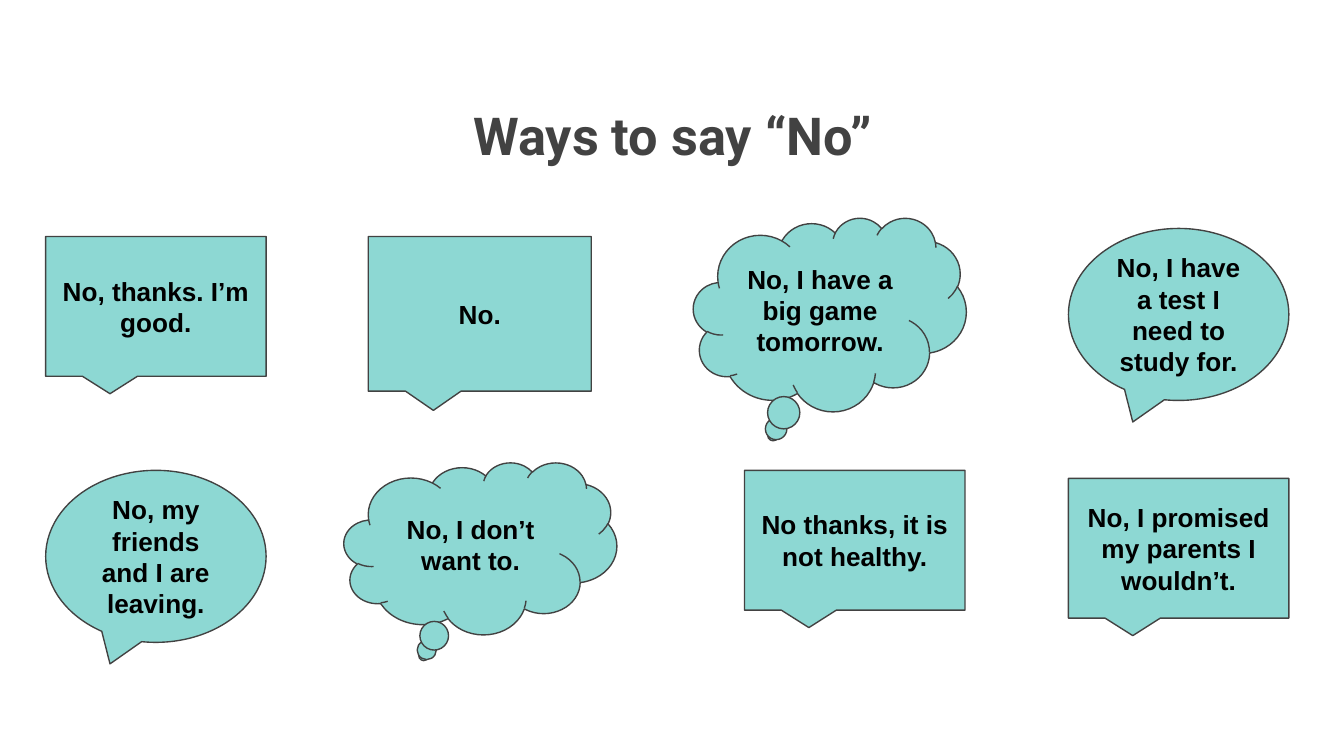
from dataclasses import dataclass

from pptx import Presentation
from pptx.dml.color import RGBColor
from pptx.enum.shapes import MSO_SHAPE
from pptx.enum.text import MSO_ANCHOR, MSO_AUTO_SIZE, PP_ALIGN
from pptx.util import Inches, Pt


@dataclass(frozen=True)
class Theme:
    """Colours, fonts and sizes of the slide."""
    ink: RGBColor = RGBColor(0x42, 0x42, 0x42)
    fill: RGBColor = RGBColor(0x8D, 0xD8, 0xD3)
    text: RGBColor = RGBColor(0, 0, 0)
    head: str = "Roboto"
    body: str = "Arial"
    large: Pt = Pt(28)
    small: Pt = Pt(14)
    rule: Pt = Pt(0.75)


THEME = Theme()
UNIT = Inches(0.1)
COLS, ROWS = 100, 56.25
TAIL = (-0.208, 0.625)

RECT = MSO_SHAPE.RECTANGULAR_CALLOUT
ROUND = MSO_SHAPE.ROUNDED_RECTANGULAR_CALLOUT
OVAL = MSO_SHAPE.OVAL_CALLOUT
CLOUD = MSO_SHAPE.CLOUD_CALLOUT

REPLIES = [
    (RECT, (0, 1.4, 16.4, 10.4), "No, thanks. I’m good."),
    (ROUND, (24, 1.4, 16.6, 11.5), "No."),
    (OVAL, (76.1, 0.8, 16.4, 12.8), "No, I have a test I need to study for."),
    (CLOUD, (48.2, 0, 20.3, 14.4), "No, I have a big game tomorrow."),
    (RECT, (76.1, 19.4, 16.4, 10.4), "No, I promised my parents I wouldn’t."),
    (ROUND, (52, 18.8, 16.4, 10.4), "No thanks, it is not healthy."),
    (CLOUD, (22.2, 18.2, 20.3, 12.8), "No, I don’t want to."),
    (OVAL, (0, 18.8, 16.4, 12.8), "No, my friends and I are leaving."),
]


def grid(*cells):
    """Turn grid cells into slide lengths."""
    return [int(cell * UNIT) for cell in cells]


def write(shape, text, font, size, colour, anchor):
    """Fill a shape with one bold, centred paragraph."""
    frame = shape.text_frame
    frame.text = text
    frame.word_wrap = True
    frame.auto_size = MSO_AUTO_SIZE.NONE
    frame.vertical_anchor = anchor
    frame.margin_left = frame.margin_right = UNIT
    frame.margin_top = frame.margin_bottom = UNIT
    line = frame.paragraphs[0]
    line.alignment = PP_ALIGN.CENTER
    line.font.name, line.font.size, line.font.bold = font, size, True
    line.font.color.rgb = colour


def add_title(slide, box, text):
    """Place and format the title."""
    title = slide.shapes.title
    title.left, title.top, title.width, title.height = grid(*box)
    write(title, text, THEME.head, THEME.large, THEME.ink, MSO_ANCHOR.TOP)


def add_bubble(slide, box, kind, text):
    """Draw one speech bubble with its reply."""
    bubble = slide.shapes.add_shape(kind, *grid(*box))
    bubble.shadow.inherit = False
    bubble.fill.solid()
    bubble.fill.fore_color.rgb = THEME.fill
    bubble.line.color.rgb = THEME.ink
    bubble.line.width = THEME.rule
    tail = TAIL + (0,) if kind == ROUND else TAIL
    for spot, value in enumerate(tail):
        bubble.adjustments[spot] = value
    write(bubble, text, THEME.body, THEME.small, THEME.text, MSO_ANCHOR.MIDDLE)


def add_replies(slide, box, replies):
    """Place all bubbles relative to the corner of the region."""
    left, top = box[:2]
    for kind, (col, row, wide, high), text in replies:
        add_bubble(slide, (left + col, top + row, wide, high), kind, text)


def main():
    """Build and save the slide."""
    deck = Presentation()
    deck.slide_width, deck.slide_height = grid(COLS, ROWS)
    slide = deck.slides.add_slide(deck.slide_layouts[5])
    add_title(slide, (11.6, 6.7, 76.9, 10.9), "Ways to say “No”")
    add_replies(slide, (3.4, 16.2, 92.5, 31.6), REPLIES)
    deck.save("out.pptx")


if __name__ == "__main__":
    main()
